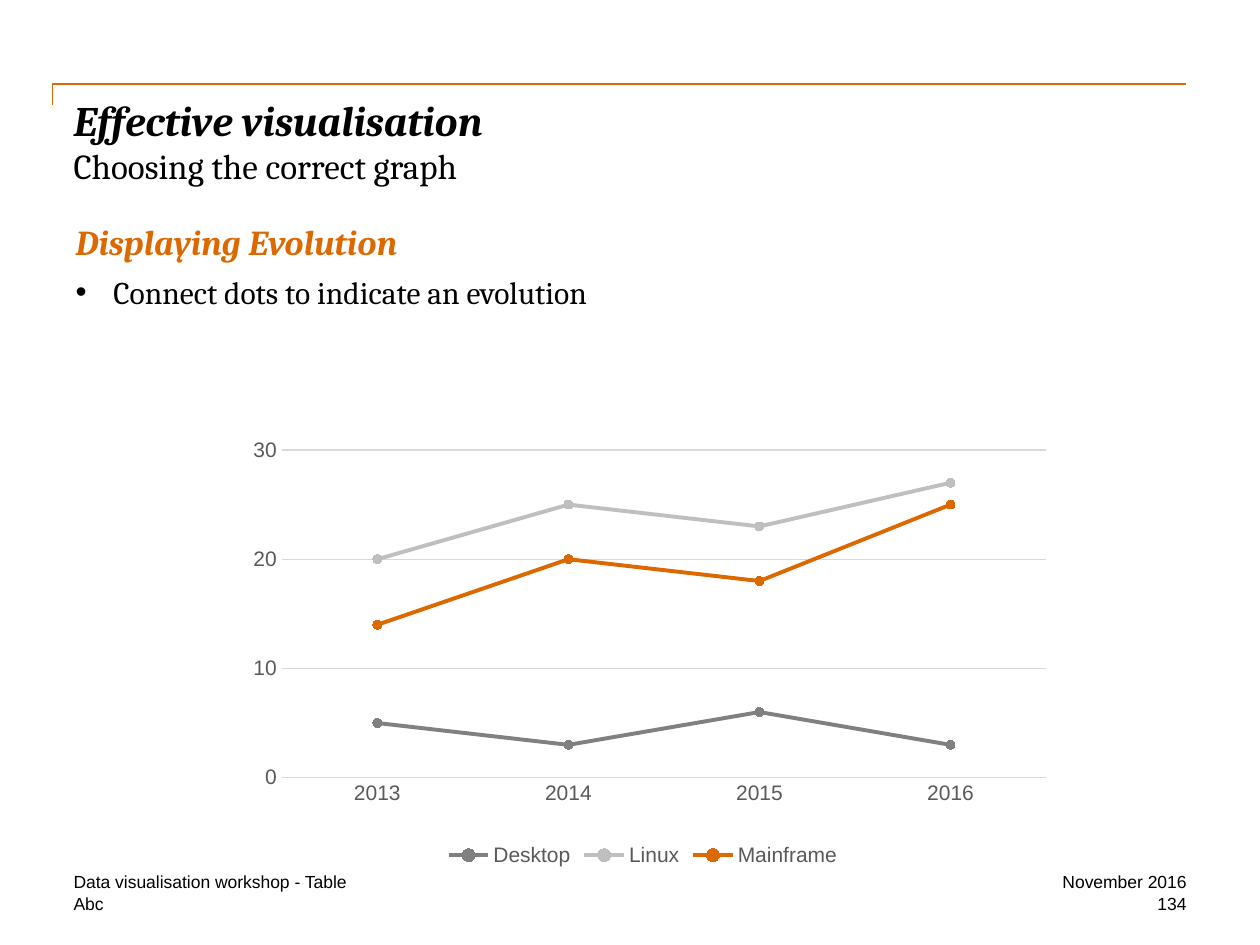
from dataclasses import dataclass

from lxml.etree import SubElement
from pptx import Presentation
from pptx.chart.data import CategoryChartData as ChartData
from pptx.dml.color import RGBColor as Rgb
from pptx.enum.chart import XL_CHART_TYPE as Kind
from pptx.enum.chart import XL_LEGEND_POSITION as Spot
from pptx.enum.chart import XL_MARKER_STYLE as Mark
from pptx.enum.chart import XL_TICK_MARK as Tick
from pptx.enum.text import MSO_ANCHOR as Anchor
from pptx.enum.text import MSO_AUTO_SIZE as Fit
from pptx.enum.text import PP_ALIGN as Align
from pptx.oxml import parse_xml
from pptx.oxml.ns import nsdecls, qn
from pptx.util import Inches, Pt


@dataclass(frozen=True)
class Theme:
    serif: str = "Cambria"
    sans: str = "Arial"
    ink: str = "000000"
    accent: str = "DC6900"
    label: str = "595959"
    rule: str = "D9D9D9"
    title: int = 24
    sub: int = 20
    body: int = 18
    axis: int = 12
    foot: int = 10


@dataclass(frozen=True)
class Box:
    """A place on the grid, in columns and rows."""
    col: float
    row: float
    wide: float
    high: float

    def place(self) -> tuple:
        return tuple(cell(n) for n in (self.col, self.row, self.wide, self.high))


@dataclass(frozen=True)
class Foot:
    text: str
    box: Box
    align: Align = Align.LEFT
    anchor: Anchor = Anchor.TOP


@dataclass(frozen=True)
class Series:
    name: str
    color: str
    vals: tuple


THEME = Theme()
COLS, ROWS = 120, 90  # twelve cells to the inch
TITLE = Box(7, 9, 106, 12)
BODY = Box(7.2, 21, 99.2, 27.4)
CHART = Box(21.24, 38.4, 80, 44.6)
CORNER = ((5, 10), (5, 8), (113, 8))
PLOT = {"x": 0.07, "y": 0.1, "w": 0.91, "h": 0.7}
YEARS = ("2013", "2014", "2015", "2016")
SERIES = (
    Series("Desktop", "808080", (5, 3, 6, 3)),
    Series("Linux", "BFBFBF", (20, 25, 23, 27)),
    Series("Mainframe", THEME.accent, (14, 20, 18, 25)),
)
FEET = (
    Foot("Data visualisation workshop - Table", Box(7, 83, 69, 2), anchor=Anchor.BOTTOM),
    Foot("Abc", Box(7, 85, 34, 2)),
    Foot("November 2016", Box(93, 83, 20, 2), Align.RIGHT),
    Foot("134", Box(93, 85, 20, 2), Align.RIGHT),
)


def cell(count: float) -> int:
    return Inches(count / 12)


def style(font, size: int, face: str, color: str, strong: bool = False) -> None:
    font.size, font.name = Pt(size), face
    font.bold = font.italic = strong
    font.color.rgb = Rgb.from_string(color)


def stroke(line, color: str, width: float) -> None:
    line.color.rgb = Rgb.from_string(color)
    line.width = Pt(width)


def frame(shape, anchor: Anchor = Anchor.TOP):
    text = shape.text_frame
    text.margin_left = text.margin_right = text.margin_top = text.margin_bottom = 0
    text.word_wrap, text.auto_size = True, Fit.NONE
    text.vertical_anchor = anchor
    return text


def draw_title(slide) -> None:
    shape = slide.shapes.title
    shape.left, shape.top, shape.width, shape.height = TITLE.place()
    para = frame(shape).paragraphs[0]
    para.alignment = Align.LEFT
    head = para.add_run()
    head.text = "Effective visualisation"
    style(head.font, THEME.title, THEME.serif, THEME.ink, True)
    para.add_line_break()
    sub = para.add_run()
    sub.text = "Choosing the correct graph"
    style(sub.font, THEME.sub, THEME.serif, THEME.ink)


def draw_corner(slide) -> None:
    start, *rest = [(cell(x), cell(y)) for x, y in CORNER]
    path = slide.shapes.build_freeform(*start)
    path.add_line_segments(rest, close=False)
    shape = path.convert_to_shape()
    shape.shadow.inherit = False
    shape.fill.background()
    stroke(shape.line, THEME.accent, 1)


def draw_body(slide) -> None:
    text = frame(slide.shapes.add_textbox(*BODY.place()))
    head, item = text.paragraphs[0], text.add_paragraph()
    head.text = "Displaying Evolution"
    head.space_after = Pt(6)
    style(head.font, THEME.sub, THEME.serif, THEME.accent, True)
    item.text = "Connect dots to indicate an evolution"
    item.space_after = Pt(9)
    props = item._p.get_or_add_pPr()
    props.set("marL", str(Inches(0.3)))
    props.set("indent", str(-Inches(0.3)))
    SubElement(props, qn("a:buFont"), typeface=THEME.sans)
    SubElement(props, qn("a:buChar"), char="•")
    style(item.font, THEME.body, THEME.serif, THEME.ink)


def draw_foot(slide, foot: Foot) -> None:
    text = frame(slide.shapes.add_textbox(*foot.box.place()), foot.anchor)
    para = text.paragraphs[0]
    para.text, para.alignment = foot.text, foot.align
    style(para.font, THEME.foot, THEME.sans, THEME.ink)


def fix_plot(chart) -> None:
    """Pin the inner plot area to shares of the chart."""
    area = chart._chartSpace.chart.plotArea
    for old in area.findall(qn("c:layout")):
        area.remove(old)
    modes = "".join(f'<c:{k}Mode val="edge"/>' for k in "xy")
    sizes = "".join(f'<c:{k} val="{v}"/>' for k, v in PLOT.items())
    area.insert(0, parse_xml(
        f'<c:layout {nsdecls("c")}><c:manualLayout><c:layoutTarget val="inner"/>'
        f"{modes}{sizes}</c:manualLayout></c:layout>"))


def draw_chart(slide) -> None:
    data = ChartData()
    data.categories = YEARS
    for row in SERIES:
        data.add_series(row.name, row.vals)
    chart = slide.shapes.add_chart(Kind.LINE_MARKERS, *CHART.place(), data).chart
    chart.has_title = False
    style(chart.font, THEME.axis, THEME.sans, THEME.label)
    chart.has_legend = True
    chart.legend.position = Spot.BOTTOM
    chart.legend.include_in_layout = False
    style(chart.legend.font, THEME.axis, THEME.sans, THEME.label)
    fix_plot(chart)

    # Axes and grid
    cats, vals = chart.category_axis, chart.value_axis
    for axis in (cats, vals):
        axis.major_tick_mark = axis.minor_tick_mark = Tick.NONE
        style(axis.tick_labels.font, THEME.axis, THEME.sans, THEME.label)
    stroke(cats.format.line, THEME.rule, 0.75)
    vals.format.line.fill.background()
    vals.minimum_scale, vals.maximum_scale, vals.major_unit = 0, 30, 10
    stroke(vals.major_gridlines.format.line, THEME.rule, 0.75)

    # Lines and dots
    chart.plots[0].vary_by_categories = False
    for line, row in zip(chart.plots[0].series, SERIES):
        line.smooth = False
        stroke(line.format.line, row.color, 2.25)
        line.marker.style, line.marker.size = Mark.CIRCLE, 5
        line.marker.format.fill.solid()
        line.marker.format.fill.fore_color.rgb = Rgb.from_string(row.color)
        stroke(line.marker.format.line, row.color, 0.75)


def main() -> None:
    deck = Presentation()
    deck.slide_width, deck.slide_height = cell(COLS), cell(ROWS)
    slide = deck.slides.add_slide(deck.slide_layouts[5])
    draw_corner(slide)
    draw_title(slide)
    for foot in FEET:
        draw_foot(slide, foot)
    draw_chart(slide)
    draw_body(slide)
    deck.save("out.pptx")


if __name__ == "__main__":
    main()
